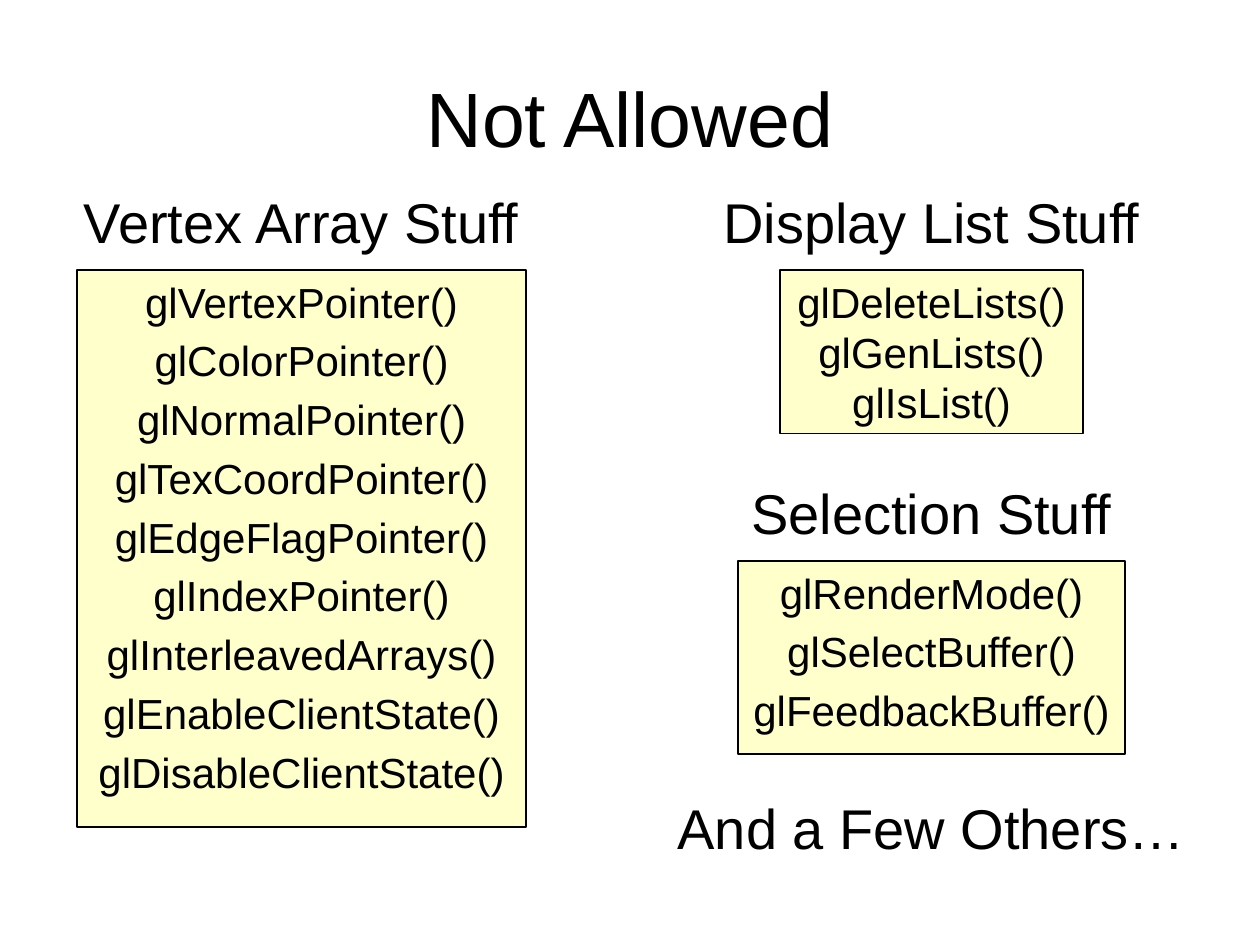
from dataclasses import dataclass

from pptx import Presentation
from pptx.dml.color import RGBColor
from pptx.enum.shapes import MSO_SHAPE
from pptx.enum.text import MSO_ANCHOR, PP_ALIGN
from pptx.util import Cm, Pt

RECTANGLE = MSO_SHAPE.RECTANGLE
CENTER = PP_ALIGN.CENTER
TOP = MSO_ANCHOR.TOP
MIDDLE = MSO_ANCHOR.MIDDLE


@dataclass(frozen=True)
class Theme:
    font: str = "Arial"
    ink: RGBColor = RGBColor(0x00, 0x00, 0x00)
    panel: RGBColor = RGBColor(0xFF, 0xFF, 0xCC)
    title_size: int = 44
    heading_size: int = 32
    function_size: int = 24
    line_height: float = 1.2
    paragraph_gap: float = 0.2
    border: int = 1


THEME = Theme()
LEFT_AXIS = 6.08
RIGHT_AXIS = 18.78
HEADING_WIDTH = 9.58
HEADING_HEIGHT = 1.52
PANEL_OFFSET = 1.78

VERTEX_FUNCTIONS = [
    "glVertexPointer()", "glColorPointer()", "glNormalPointer()",
    "glTexCoordPointer()", "glEdgeFlagPointer()", "glIndexPointer()",
    "glInterleavedArrays()", "glEnableClientState()", "glDisableClientState()",
]
LIST_FUNCTIONS = ["glDeleteLists()", "glGenLists()", "glIsList()"]
SELECTION_FUNCTIONS = ["glRenderMode()", "glSelectBuffer()", "glFeedbackBuffer()"]

SECTIONS = [
    ("Vertex Array Stuff", LEFT_AXIS, 3.66, 9.04, 11.23, VERTEX_FUNCTIONS, THEME.paragraph_gap),
    ("Display List Stuff", RIGHT_AXIS, 3.66, 6.1, 3.3, LIST_FUNCTIONS, 0),
    ("Selection Stuff", RIGHT_AXIS, 9.53, 7.8, 3.89, SELECTION_FUNCTIONS, THEME.paragraph_gap),
]


def centered_bounds(axis, top, width, height):
    return Cm(axis - width / 2), Cm(top), Cm(width), Cm(height)


def write_lines(frame, lines, size, gap=0, anchor=TOP):
    frame.word_wrap = True
    frame.vertical_anchor = anchor
    for index, line in enumerate(lines):
        paragraph = frame.paragraphs[0] if index == 0 else frame.add_paragraph()
        paragraph.text = line
        paragraph.alignment = CENTER
        paragraph.line_spacing = Pt(size * THEME.line_height)
        paragraph.space_before = Pt(size * gap if index else 0)
        for name, value in {"name": THEME.font, "size": Pt(size)}.items():
            setattr(paragraph.font, name, value)
        paragraph.font.color.rgb = THEME.ink


def add_label(slide, text, bounds, size, anchor=TOP):
    label = slide.shapes.add_textbox(*bounds)
    write_lines(label.text_frame, [text], size, anchor=anchor)


def add_panel(slide, functions, bounds, gap):
    panel = slide.shapes.add_shape(RECTANGLE, *bounds)
    panel.shadow.inherit = False
    panel.fill.solid()
    panel.fill.fore_color.rgb = THEME.panel
    panel.line.color.rgb = THEME.ink
    panel.line.width = Pt(THEME.border)
    write_lines(panel.text_frame, functions, THEME.function_size, gap)


def add_section(slide, heading, axis, top, width, height, functions, gap):
    heading_bounds = centered_bounds(axis, top, HEADING_WIDTH, HEADING_HEIGHT)
    add_label(slide, heading, heading_bounds, THEME.heading_size)
    panel_bounds = centered_bounds(axis, top + PANEL_OFFSET, width, height)
    add_panel(slide, functions, panel_bounds, gap)


def main():
    deck = Presentation()
    deck.slide_width, deck.slide_height = Cm(25.4), Cm(19.05)
    slide = deck.slides.add_slide(deck.slide_layouts[6])

    title_bounds = centered_bounds(12.7, 0.76, 22.86, 3.18)
    add_label(slide, "Not Allowed", title_bounds, THEME.title_size, MIDDLE)
    for section in SECTIONS:
        add_section(slide, *section)
    closing_bounds = centered_bounds(RIGHT_AXIS, 15.88, 12.17, HEADING_HEIGHT)
    add_label(slide, "And a Few Others…", closing_bounds, THEME.heading_size)

    deck.save("out.pptx")


if __name__ == "__main__":
    main()
